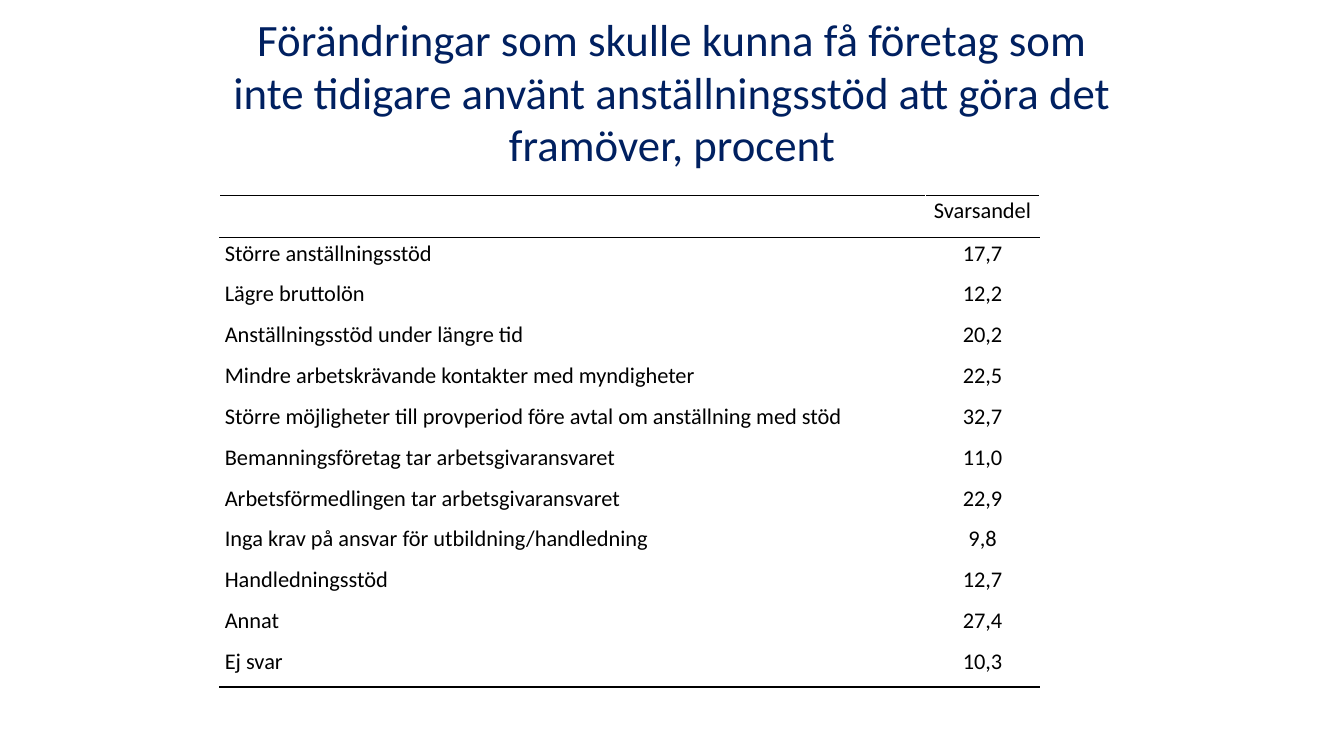
from lxml import etree
from pptx import Presentation
from pptx.dml.color import RGBColor
from pptx.enum.text import MSO_ANCHOR, PP_ALIGN
from pptx.oxml.ns import qn
from pptx.util import Inches, Pt

# Content
TITLE = ("Förändringar som skulle kunna få företag som inte tidigare använt "
         "anställningsstöd att göra det framöver, procent")
ANSWERS = [
    ("", "Svarsandel"),
    ("Större anställningsstöd", "17,7"),
    ("Lägre bruttolön", "12,2"),
    ("Anställningsstöd under längre tid", "20,2"),
    ("Mindre arbetskrävande kontakter med myndigheter", "22,5"),
    ("Större möjligheter till provperiod före avtal om anställning med stöd", "32,7"),
    ("Bemanningsföretag tar arbetsgivaransvaret", "11,0"),
    ("Arbetsförmedlingen tar arbetsgivaransvaret", "22,9"),
    ("Inga krav på ansvar för utbildning/handledning", "9,8"),
    ("Handledningsstöd", "12,7"),
    ("Annat", "27,4"),
    ("Ej svar", "10,3"),
]

# Format
FONT = "Calibri"
NAVY = RGBColor(0x00, 0x20, 0x60)
BLACK = RGBColor(0x00, 0x00, 0x00)
LEFT, CENTER = PP_ALIGN.LEFT, PP_ALIGN.CENTER
MIDDLE = MSO_ANCHOR.MIDDLE
COLUMN_WIDTHS = (7, 1.13)
COLUMN_ALIGNS = (LEFT, CENTER)
HEADER_HEIGHT, TABLE_HEIGHT = 0.42, 4.88
CELL_FORMAT = {
    "margin_left": Inches(0.05), "margin_right": Inches(0.05),
    "margin_top": 0, "margin_bottom": 0,
}
LAST = len(ANSWERS) - 1
RULES = {0: ("lnT", "lnB"), 1: ("lnT",), LAST: ("lnB",)}


def style_paragraph(paragraph, text, size, color, align, spacing):
    paragraph.text = text
    paragraph.alignment = align
    paragraph.line_spacing = spacing
    for attribute, value in {"name": FONT, "size": Pt(size)}.items():
        setattr(paragraph.font, attribute, value)
    paragraph.font.color.rgb = color


def add_rules(cell, sides):
    properties = cell._tc.get_or_add_tcPr()
    for position, side in enumerate(sides):
        line = etree.Element(qn(f"a:{side}"), w=str(Pt(1)))
        fill = etree.SubElement(line, qn("a:solidFill"))
        etree.SubElement(fill, qn("a:srgbClr"), val=str(BLACK))
        properties.insert(position, line)


prs = Presentation()
prs.slide_width, prs.slide_height = Inches(13.33), Inches(7.5)
slide = prs.slides.add_slide(prs.slide_layouts[6])

# Title
title = slide.shapes.add_textbox(
    Inches(2.17), Inches(0.3), Inches(8.99), Inches(1.25)).text_frame
title.word_wrap = True
title.vertical_anchor = MIDDLE
style_paragraph(title.paragraphs[0], TITLE, 32, NAVY, CENTER, 0.98)

# Table of answers
table = slide.shapes.add_table(
    len(ANSWERS), len(COLUMN_WIDTHS), Inches(2.18), Inches(1.94),
    Inches(sum(COLUMN_WIDTHS)), Inches(TABLE_HEIGHT)).table
table.first_row = table.horz_banding = False
for column, width in zip(table.columns, COLUMN_WIDTHS):
    column.width = Inches(width)

row_height = (TABLE_HEIGHT - HEADER_HEIGHT) / LAST
for r, answer in enumerate(ANSWERS):
    table.rows[r].height = Inches(row_height if r else HEADER_HEIGHT)
    for c, text in enumerate(answer):
        cell = table.cell(r, c)
        for attribute, value in CELL_FORMAT.items():
            setattr(cell, attribute, value)
        cell.fill.background()
        style_paragraph(cell.text_frame.paragraphs[0], text, 16, BLACK,
                        COLUMN_ALIGNS[c], 1.07)
        add_rules(cell, RULES.get(r, ()))

prs.save("out.pptx")
